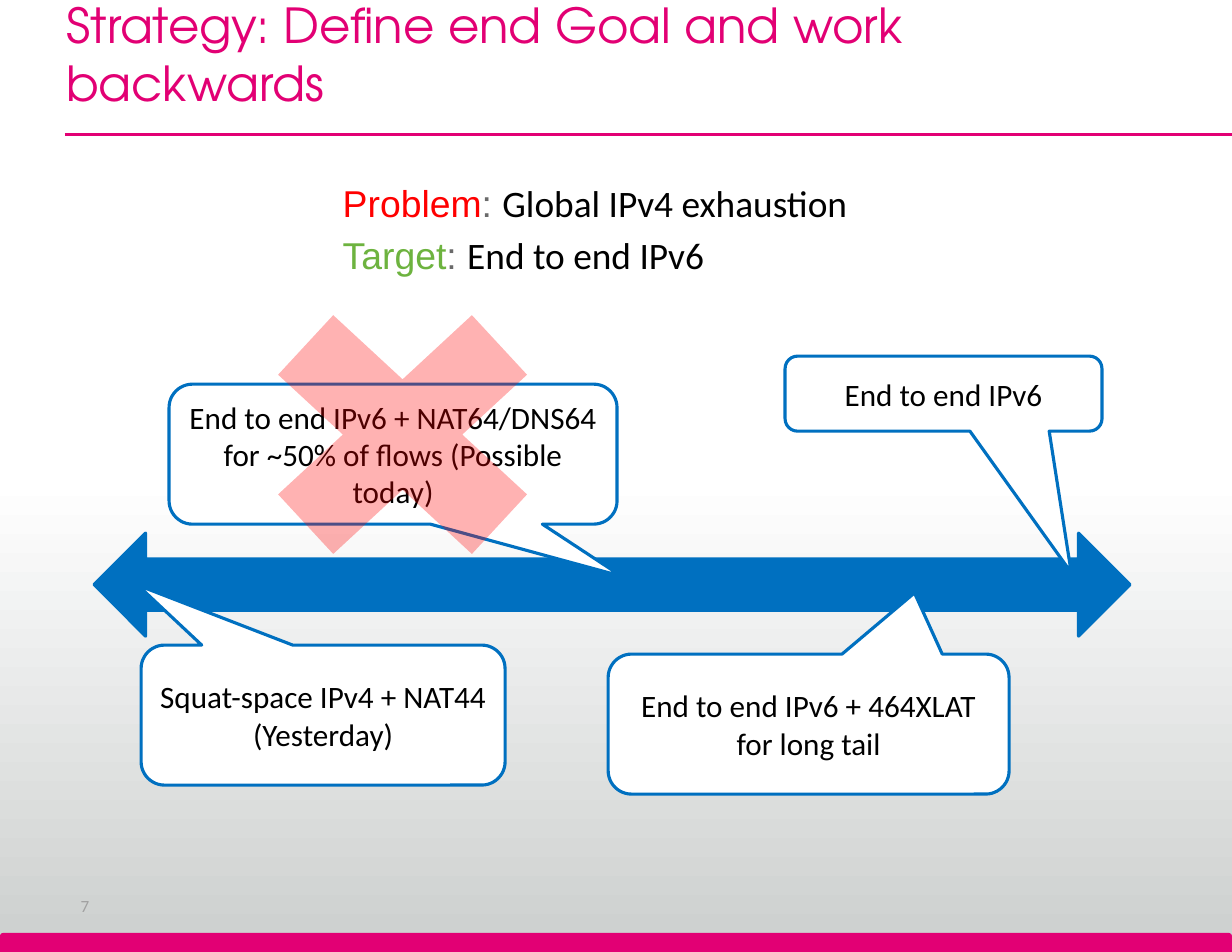
from lxml import etree
from pptx import Presentation
from pptx.dml.color import RGBColor
from pptx.enum.shapes import MSO_CONNECTOR, MSO_SHAPE
from pptx.enum.text import MSO_ANCHOR, PP_ALIGN
from pptx.oxml.ns import qn
from pptx.util import Inches, Pt

WHITE = RGBColor(0xFF, 0xFF, 0xFF)
BLACK = RGBColor(0, 0, 0)
MAGENTA = RGBColor(0xE2, 0x00, 0x74)
SILVER = RGBColor(0xCC, 0xCF, 0xCE)
PAGE_GREY = RGBColor(0xA1, 0xA1, 0xA1)
COLON_GREY = RGBColor(0x6A, 0x6A, 0x6A)
BLUE = RGBColor(0x00, 0x70, 0xC0)
RED = RGBColor(0xFF, 0, 0)
GREEN = RGBColor(0x6D, 0xB3, 0x3F)

RECT = MSO_SHAPE.RECTANGLE
CALLOUT = MSO_SHAPE.ROUNDED_RECTANGULAR_CALLOUT
TOP, MIDDLE, BOTTOM = MSO_ANCHOR.TOP, MSO_ANCHOR.MIDDLE, MSO_ANCHOR.BOTTOM
LEFT, CENTER = PP_ALIGN.LEFT, PP_ALIGN.CENTER

prs = Presentation()
prs.slide_width, prs.slide_height = Inches(11), Inches(8.5)
slide = prs.slides.add_slide(prs.slide_layouts[6])


def draw(kind, box, fill, line=None, adjustments=()):
    """Add a preset shape; a pair of colours as fill makes a downward gradient."""
    shape = slide.shapes.add_shape(kind, *map(Inches, box))
    shape.shadow.inherit = False
    for i, value in enumerate(adjustments):
        shape.adjustments[i] = value
    if isinstance(fill, RGBColor):
        shape.fill.solid()
        shape.fill.fore_color.rgb = fill
    else:
        shape.fill.gradient()
        shape.fill.gradient_angle = 270
        for stop, color, position in zip(shape.fill.gradient_stops, fill, (0, 1)):
            stop.color.rgb = color
            stop.position = position
    if line is None:
        shape.line.fill.background()
    else:
        shape.line.color.rgb = line
        shape.line.width = Pt(2)
    return shape


def write(paragraphs, shape=None, box=None, size=20, anchor=MIDDLE, align=LEFT, gap=0):
    """Fill a shape, or a new text box, with paragraphs of (text, font, colour) runs."""
    if shape is None:
        shape = slide.shapes.add_textbox(*map(Inches, box))
        shape.text_frame.margin_left = shape.text_frame.margin_right = Inches(0.11)
        shape.text_frame.margin_top = shape.text_frame.margin_bottom = Inches(0.06)
    frame = shape.text_frame
    frame.word_wrap = True
    frame.vertical_anchor = anchor
    for i, runs in enumerate(paragraphs):
        paragraph = frame.add_paragraph() if i else frame.paragraphs[0]
        paragraph.alignment = align
        if i:
            paragraph.space_before = Pt(gap)
        for text, font, color in runs:
            run = paragraph.add_run()
            run.text = text
            run.font.name = font
            run.font.size = Pt(size)
            run.font.color.rgb = color


# Background, footer band and title rule
draw(RECT, (0, 4.26, 11, 4.24), (WHITE, SILVER))
draw(RECT, (0, 0.03, 11, 4.24), WHITE)
draw(MSO_SHAPE.ROUND_2_SAME_RECTANGLE, (0, 8.33, 11, 0.17), MAGENTA)
rule = slide.shapes.add_connector(
    MSO_CONNECTOR.STRAIGHT, Inches(0.58), Inches(1.2), Inches(11), Inches(1.2))
rule.line.color.rgb = MAGENTA
rule.line.width = Pt(2)
etree.SubElement(rule.element.spPr, qn("a:effectLst"))

write([[("Strategy: Define end Goal and work backwards", "TeX Gyre Adventor", MAGENTA)]],
      box=(0.48, 0.27, 9.98, 0.78), size=31, anchor=BOTTOM)
write([[("7", "Calibri", PAGE_GREY)]], box=(0.61, 7.86, 0.9, 0.45), size=11)

# Timeline and its stages
draw(MSO_SHAPE.LEFT_RIGHT_ARROW, (0.84, 4.76, 9.25, 0.92), BLUE, BLUE)
for stage, box, tip in [
    ("End to end IPv6", (7.01, 3.18, 2.83, 0.67), (0.403, 2.386)),
    ("End to end IPv6 + 464XLAT for long tail", (5.43, 5.84, 3.58, 1.25), (0.264, -0.937)),
    ("End to end IPv6 + NAT64/DNS64 for ~50% of flows (Possible today)",
     (1.51, 3.43, 4, 1.25), (0.51, 0.872)),
    ("Squat-space IPv4 + NAT44 (Yesterday)", (1.26, 5.76, 3.25, 1.25), (-0.509, -0.928)),
]:
    callout = draw(CALLOUT, box, WHITE, BLUE, (*tip, 0.167))
    write([[(stage, "Calibri", BLACK)]], shape=callout, align=CENTER)

# Translucent cross over the rejected stage
cross = draw(MSO_SHAPE.MATH_MULTIPLY, (1.93, 2.34, 3.33, 3.08), RED)
cross_color = cross.element.spPr.find(qn("a:solidFill")).find(qn("a:srgbClr"))
etree.SubElement(cross_color, qn("a:alpha"), val="30000")

write([
    [(label, "Arial", color), (": ", "Arial", COLON_GREY), (text, "Calibri", BLACK)]
    for label, color, text in [
        ("Problem", RED, "Global IPv4 exhaustion"),
        ("Target", GREEN, "End to end IPv6"),
    ]
], box=(2.95, 1.55, 5.12, 1.14), size=24, anchor=TOP, gap=4.8)

prs.save("out.pptx")
